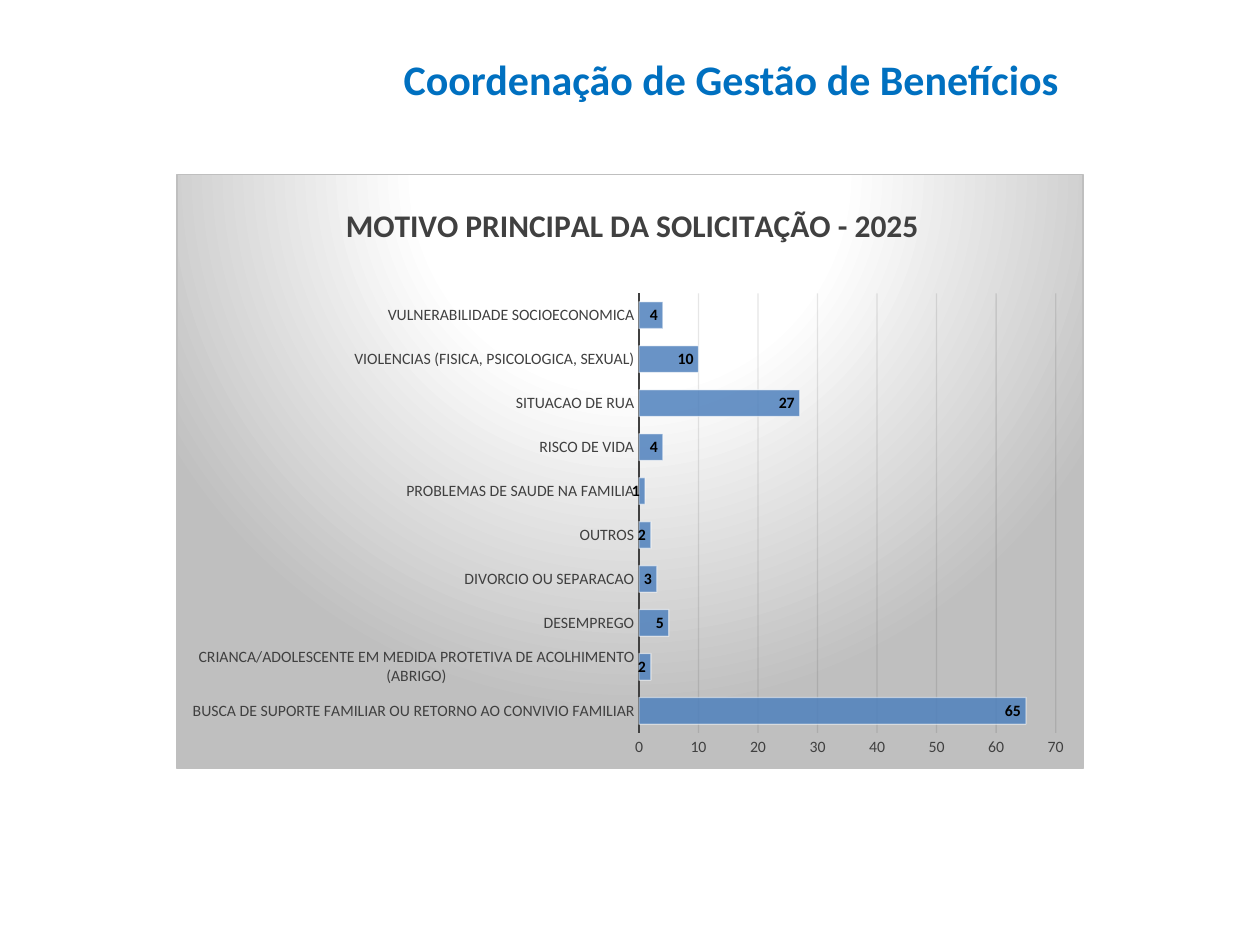
from lxml import etree
from pptx import Presentation
from pptx.chart.data import CategoryChartData
from pptx.dml.color import RGBColor
from pptx.enum.chart import XL_CHART_TYPE, XL_LABEL_POSITION, XL_TICK_MARK
from pptx.enum.text import PP_ALIGN
from pptx.oxml import parse_xml
from pptx.oxml.ns import nsdecls, qn
from pptx.util import Inches, Pt

COLORS = {
    "heading": "0070C0",
    "text": "404040",
    "label": "000000",
    "bar": "4F81BD",
    "white": "FFFFFF",
    "grid": "0D0D0D",
    "border": "BFBFBF",
}
FONT = "Calibri"
WIDTH, HEIGHT = Inches(10), Inches(7.5)

REASONS = {
    "BUSCA DE SUPORTE FAMILIAR OU RETORNO AO CONVIVIO FAMILIAR": 65,
    "CRIANCA/ADOLESCENTE EM MEDIDA PROTETIVA DE ACOLHIMENTO (ABRIGO)": 2,
    "DESEMPREGO": 5,
    "DIVORCIO OU SEPARACAO": 3,
    "OUTROS": 2,
    "PROBLEMAS DE SAUDE NA FAMILIA": 1,
    "RISCO DE VIDA": 4,
    "SITUACAO DE RUA": 27,
    "VIOLENCIAS (FISICA, PSICOLOGICA, SEXUAL)": 10,
    "VULNERABILIDADE SOCIOECONOMICA": 4,
}


def rgb(name):
    return RGBColor.from_string(COLORS[name])


def set_all(target, **values):
    for attribute, value in values.items():
        setattr(target, attribute, value)


def style_font(font, size, color, bold=False):
    set_all(font, name=FONT, size=Pt(size), bold=bold)
    font.color.rgb = rgb(color)


def style_line(line, color, width, opacity=100):
    line.width = Pt(width)
    line.color.rgb = rgb(color)
    set_opacity(line.format_element if hasattr(line, "format_element") else None, opacity)


def set_opacity(element, percent):
    """Make every solid colour below the element partly transparent."""
    if element is None:
        return
    for color in element.iter(qn("a:srgbClr")):
        etree.SubElement(color, qn("a:alpha")).set("val", str(percent * 1000))


def share_box(left, top, width, height):
    """Turn shares of the slide's size into lengths."""
    return (int(WIDTH * left), int(HEIGHT * top),
            int(WIDTH * width), int(HEIGHT * height))


def layout_xml(inner=False, **shares):
    target = '<c:layoutTarget val="inner"/>' if inner else ""
    modes = "".join(f'<c:{k}Mode val="edge"/>' for k in "xy")
    places = "".join(f'<c:{k} val="{v}"/>' for k, v in shares.items())
    return parse_xml(f'<c:layout {nsdecls("c")}><c:manualLayout>{target}{modes}'
                     f'{places}</c:manualLayout></c:layout>')


def place(element, layout, before):
    """Swap the element's layout for a manual one, ahead of the named child."""
    for old in element.findall(qn("c:layout")):
        element.remove(old)
    element.find(qn(before)).addprevious(layout)


def add_heading(slide, text):
    frame = slide.shapes.add_textbox(*share_box(0.31, 0.05, 0.54, 0.07)).text_frame
    frame.word_wrap = True
    paragraph = frame.paragraphs[0]
    paragraph.text = text
    paragraph.alignment = PP_ALIGN.RIGHT
    style_font(paragraph.runs[0].font, 24, "heading", bold=True)


def add_background(chart):
    """Put a radial gradient and a thin border behind the whole chart."""
    stops = "".join(
        f'<a:gs pos="{position * 1000}"><a:srgbClr val="{COLORS[color]}"/></a:gs>'
        for position, color in ((0, "white"), (39, "white"), (100, "border")))
    chart.element.find(qn("c:chart")).addnext(parse_xml(
        f'<c:spPr {nsdecls("c", "a")}><a:gradFill><a:gsLst>{stops}</a:gsLst>'
        '<a:path path="circle"><a:fillToRect l="50000" t="-80000" r="50000" '
        'b="180000"/></a:path></a:gradFill><a:ln w="9525"><a:solidFill>'
        f'<a:srgbClr val="{COLORS["border"]}"/></a:solidFill></a:ln></c:spPr>'))


def style_title(chart, text):
    frame = chart.chart_title.text_frame
    frame.text = text
    style_font(frame.paragraphs[0].runs[0].font, 18, "text", bold=True)
    title = chart.element.find(f'.//{qn("c:title")}')
    place(title, layout_xml(x=0.18, y=0.04), "c:overlay")


def style_axes(chart):
    for axis in (chart.category_axis, chart.value_axis):
        set_all(axis, major_tick_mark=XL_TICK_MARK.NONE,
                minor_tick_mark=XL_TICK_MARK.NONE)
        style_font(axis.tick_labels.font, 9, "text")
    style_line(chart.category_axis.format.line, "text", 1.5)
    values = chart.value_axis
    set_all(values, minimum_scale=0, maximum_scale=70, major_unit=10,
            has_major_gridlines=True)
    values.format.line.fill.background()
    style_line(values.major_gridlines.format.line, "grid", 0.75)
    set_opacity(chart.element.find(f'.//{qn("c:majorGridlines")}'), 10)


def style_bars(plot):
    set_all(plot, gap_width=65, vary_by_categories=False, has_data_labels=True)
    set_all(plot.data_labels, show_value=True,
            position=XL_LABEL_POSITION.INSIDE_END)
    style_font(plot.data_labels.font, 9, "label", bold=True)
    bars = plot.series[0].format
    bars.fill.solid()
    bars.fill.fore_color.rgb = rgb("bar")
    style_line(bars.line, "white", 0.75)
    shape = plot.series[0]._element.find(qn("c:spPr"))
    set_opacity(shape.find(qn("a:solidFill")), 85)
    set_opacity(shape.find(qn("a:ln")), 50)


def add_reasons_chart(slide):
    data = CategoryChartData()
    data.categories = list(REASONS)
    data.add_series("Series 1", list(REASONS.values()))
    chart = slide.shapes.add_chart(XL_CHART_TYPE.BAR_CLUSTERED,
                                   *share_box(0.14, 0.184, 0.72, 0.63), data).chart
    set_all(chart, has_legend=False, has_title=True)
    style_font(chart.font, 10, "label")
    add_background(chart)
    style_title(chart, "MOTIVO PRINCIPAL DA SOLICITAÇÃO - 2025")
    style_axes(chart)
    style_bars(chart.plots[0])
    plot_area = chart.element.find(f'.//{qn("c:plotArea")}')
    place(plot_area, layout_xml(inner=True, x=0.51, y=0.2, w=0.46, h=0.74),
          "c:barChart")


def main():
    deck = Presentation()
    set_all(deck, slide_width=WIDTH, slide_height=HEIGHT)
    slide = deck.slides.add_slide(deck.slide_layouts[6])
    add_heading(slide, "Coordenação de Gestão de Benefícios")
    add_reasons_chart(slide)
    deck.save("out.pptx")


if __name__ == "__main__":
    main()
